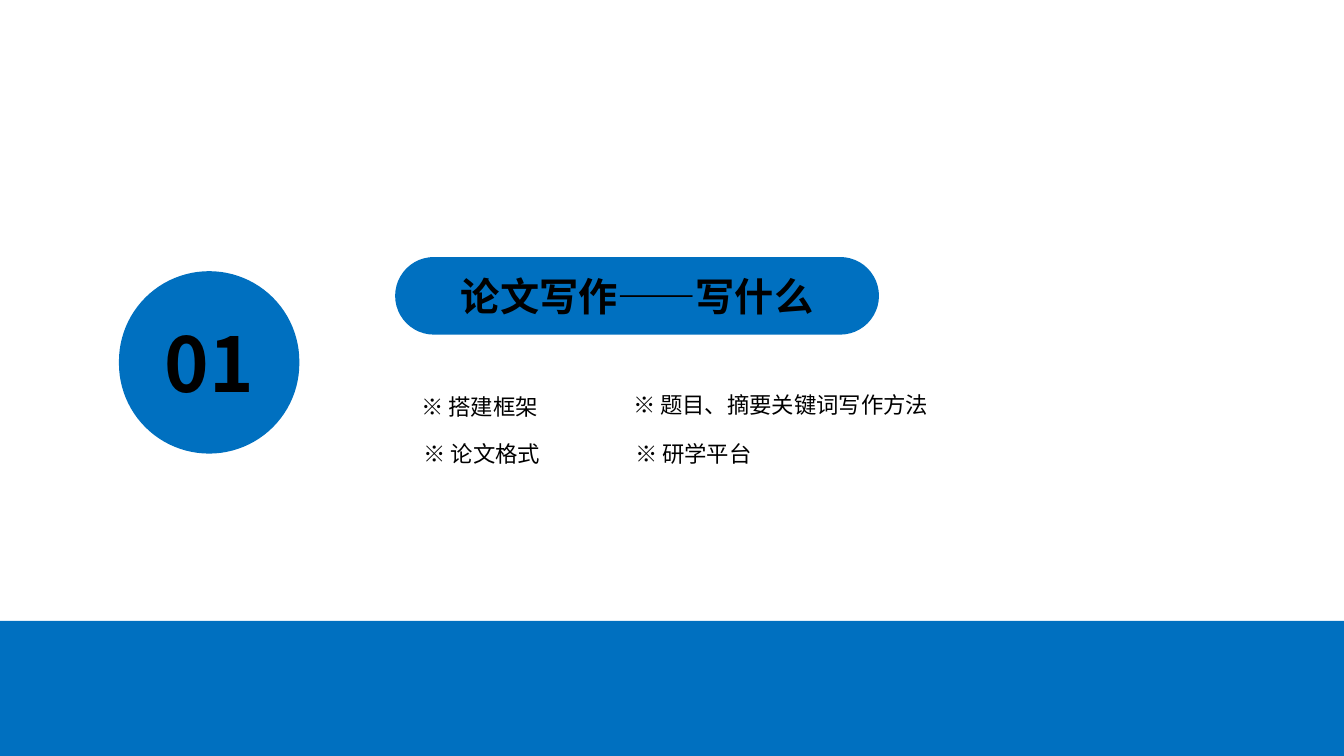
"""Build a section-opening slide with a number badge, a title pill and four topics."""
from dataclasses import dataclass

from pptx import Presentation
from pptx.dml.color import RGBColor
from pptx.enum.shapes import MSO_SHAPE
from pptx.enum.text import MSO_ANCHOR, MSO_AUTO_SIZE, PP_ALIGN
from pptx.oxml.ns import qn
from pptx.slide import Slide
from pptx.text.text import TextFrame
from pptx.util import Inches, Pt
from lxml.etree import SubElement

COLS, ROWS = 160, 90
WIDTH, HEIGHT = Inches(13.33), Inches(7.5)


@dataclass(frozen=True)
class Theme:
    font: str = "Noto Sans CJK SC"
    blue: RGBColor = RGBColor(0x00, 0x70, 0xC0)
    ink: RGBColor = RGBColor(0x00, 0x00, 0x00)
    number: int = 54
    title: int = 28
    topic: int = 16


@dataclass(frozen=True)
class Box:
    col: float
    row: float
    cols: float
    rows: float

    def emu(self) -> tuple[int, int, int, int]:
        return (round(self.col * WIDTH / COLS), round(self.row * HEIGHT / ROWS),
                round(self.cols * WIDTH / COLS), round(self.rows * HEIGHT / ROWS))


@dataclass(frozen=True)
class Panel:
    box: Box
    kind: MSO_SHAPE = MSO_SHAPE.ROUNDED_RECTANGLE
    text: str = ""
    size: int = 0


@dataclass(frozen=True)
class Topic:
    box: Box
    text: str


THEME = Theme()
TOPIC_ROWS = 3.96
COLUMN_STEP = 25.2
LEFT, INDENTED = 49.32, 49.56
LOWER_ROW = 52.08

PANELS = [
    Panel(Box(14.16, 32.28, 21.48, 21.72), text="01", size=THEME.number),
    Panel(Box(47.04, 30.6, 57.6, 9.24), text="论文写作——写什么", size=THEME.title),
]
TOPICS = [
    Topic(Box(LEFT, 46.44, 21.48, TOPIC_ROWS), "※ 搭建框架"),
    Topic(Box(LEFT + COLUMN_STEP, 46.2, 39.72, TOPIC_ROWS), "※ 题目、摘要关键词写作方法"),
    Topic(Box(INDENTED, LOWER_ROW, 24, TOPIC_ROWS), "※ 论文格式"),
    Topic(Box(INDENTED + COLUMN_STEP, LOWER_ROW, 24, TOPIC_ROWS), "※ 研学平台"),
]
BAND = Panel(Box(0, 73.92, COLS, 16.08), MSO_SHAPE.RECTANGLE)


def write(tf: TextFrame, text: str, *, size: int, bold: bool = False,
          align: PP_ALIGN = PP_ALIGN.LEFT) -> None:
    p = tf.paragraphs[0]
    p.alignment = align
    r = p.add_run()
    r.text = text
    r.font.size = Pt(size)
    r.font.bold = bold
    r.font.color.rgb = THEME.ink
    r.font.name = THEME.font
    SubElement(r.font._element, qn("a:ea")).set("typeface", THEME.font)


def draw_panel(s: Slide, panel: Panel) -> None:
    sp = s.shapes.add_shape(panel.kind, *panel.box.emu())
    sp.shadow.inherit = False
    sp.fill.solid()
    sp.fill.fore_color.rgb = THEME.blue
    sp.line.fill.background()
    if panel.kind == MSO_SHAPE.ROUNDED_RECTANGLE:
        sp.adjustments[0] = 0.5
    if panel.text:
        tf = sp.text_frame
        tf.vertical_anchor = MSO_ANCHOR.MIDDLE
        write(tf, panel.text, size=panel.size, bold=True, align=PP_ALIGN.CENTER)


def draw_topic(s: Slide, topic: Topic) -> None:
    tf = s.shapes.add_textbox(*topic.box.emu()).text_frame
    tf.word_wrap = True
    tf.auto_size = MSO_AUTO_SIZE.SHAPE_TO_FIT_TEXT
    tf.margin_left = tf.margin_right = Inches(0.07)
    tf.margin_top = tf.margin_bottom = Inches(0.03)
    write(tf, topic.text, size=THEME.topic)


def main() -> None:
    prs = Presentation()
    prs.slide_width, prs.slide_height = WIDTH, HEIGHT
    s = prs.slides.add_slide(prs.slide_layouts[6])
    for panel in PANELS:
        draw_panel(s, panel)
    for topic in TOPICS:
        draw_topic(s, topic)
    draw_panel(s, BAND)
    prs.save("out.pptx")


if __name__ == "__main__":
    main()
